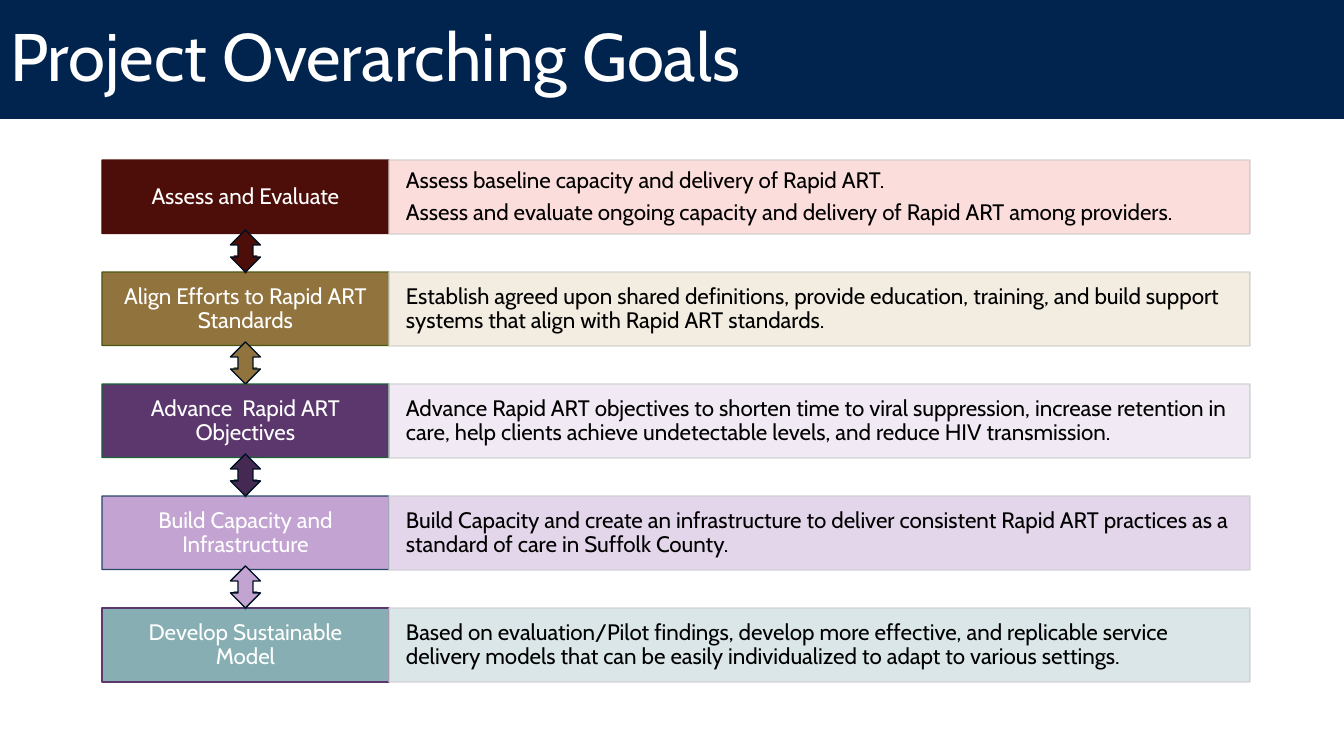
from lxml.etree import SubElement
from pptx import Presentation
from pptx.dml.color import RGBColor as Rgb
from pptx.enum.shapes import MSO_SHAPE as Kind
from pptx.enum.text import MSO_ANCHOR as Anchor, PP_ALIGN as Align
from pptx.oxml.ns import qn
from pptx.util import Pt

# Content: label, label fill, label line, details, detail fill, opacity, detail line
TITLE = "Project Overarching Goals"
GOALS = [
    ("Assess and Evaluate", "maroon", "maroon",
     ["Assess baseline capacity and delivery of Rapid ART.",
      "Assess and evaluate ongoing capacity and delivery of Rapid ART among providers."],
     "pink", 90, "pinkline"),
    ("Align Efforts to Rapid ART Standards", "gold", "olive",
     ["Establish agreed upon shared definitions, provide education, training, "
      "and build support systems that align with Rapid ART standards."],
     "cream", 90, "creamline"),
    ("Advance  Rapid ART Objectives", "purple", "green",
     ["Advance Rapid ART objectives to shorten time to viral suppression, increase "
      "retention in care, help clients achieve undetectable levels, and reduce HIV transmission."],
     "lilac", 44, "greenline"),
    ("Build Capacity and Infrastructure", "mauve", "blue",
     ["Build Capacity and create an infrastructure to deliver consistent Rapid ART "
      "practices as a standard of care in Suffolk County."],
     "lilac", 90, "blueline"),
    ("Develop Sustainable Model", "teal", "purple",
     ["Based on evaluation/Pilot findings, develop more effective, and replicable service "
      "delivery models that can be easily individualized to adapt to various settings."],
     "mist", 90, "mistline"),
]
ARROWS = ["maroon", "gold", "plum", "mauve"]
COLORS = {
    "navy": "00244D", "white": "FFFFFF", "black": "000000", "ink": "001022",
    "maroon": "4D0D08", "gold": "91733E", "purple": "5C376E", "plum": "452952",
    "mauve": "C2A3D1", "teal": "87AEB2", "olive": "495910", "green": "1B6235",
    "blue": "284769", "pink": "FBDBD9", "cream": "F1EADE", "lilac": "E0D1E8",
    "mist": "D7E4E5", "pinkline": "D0CCCC", "creamline": "D0D1CC",
    "greenline": "CDD2CE", "blueline": "CDD1D3", "mistline": "D2CED5",
}
FONT = "Cabin"

# Layout in px
SCALE = 914400 / 100.8
WIDE, HIGH, HEAD = 1344, 756, 119
LEFT, TOP, PITCH, ROW = 102, 160, 112, 74
LABEL, DETAIL = 287, 861
ARROW, RISE = 30, 42


def px(n):
    return round(n * SCALE)


def fade(fill, percent):
    for tint in fill.iter(qn("a:srgbClr")):
        SubElement(tint, qn("a:alpha"), val=str(percent * 1000))


def draw(kind, box, fill, line=None):
    shape = slide.shapes.add_shape(kind, *map(px, box))
    shape.shadow.inherit = False
    shape.fill.solid()
    shape.fill.fore_color.rgb = Rgb.from_string(COLORS[fill])
    if line:
        shape.line.color.rgb = Rgb.from_string(COLORS[line])
        shape.line.width = Pt(1)
    else:
        shape.line.fill.background()
    return shape


def write(shape, lines, size, color, align, inset, after=0):
    frame = shape.text_frame
    frame.word_wrap = True
    frame.vertical_anchor = Anchor.MIDDLE
    frame.margin_left = frame.margin_right = px(inset[0])
    frame.margin_top = frame.margin_bottom = px(inset[1])
    frame.text = "\n".join(lines)
    for para in frame.paragraphs:
        para.alignment = align
        para.line_spacing = 0.9
        para.space_after = Pt(after)
        for run in para.runs:
            run.font.name = FONT
            run.font.size = Pt(size)
            run.font.color.rgb = Rgb.from_string(COLORS[color])


deck = Presentation()
deck.slide_width, deck.slide_height = px(WIDE), px(HIGH)
slide = deck.slides.add_slide(deck.slide_layouts[6])

# Title band
band = draw(Kind.RECTANGLE, (0, 0, WIDE, HEAD), "navy")
write(band, [TITLE], 48, "white", Align.LEFT, (10, 5))

# Goal rows, from the bottom up so each callout overlaps the row below
for i, (label, fill, line, lines, tint, alpha, edge) in reversed(list(enumerate(GOALS))):
    top = TOP + i * PITCH
    area = (LEFT, top, LABEL, ROW)
    if i < len(GOALS) - 1:
        call = draw(Kind.UP_ARROW_CALLOUT, (LEFT, top, LABEL, PITCH + 1), fill, line)
        call.rotation = 180
        for k, value in enumerate((0.05, 0.1, 0.15, 0.65)):
            call.adjustments[k] = value
    else:
        draw(Kind.RECTANGLE, area, fill, line)
    name = slide.shapes.add_textbox(*map(px, area))
    write(name, [label], 16, "white", Align.CENTER, (20, 12), 5.6)

    panel = draw(Kind.RECTANGLE, (LEFT + LABEL, top, DETAIL, ROW), tint, edge)
    write(panel, lines, 16, "black", Align.LEFT, (17, 22), 5.6)
    props = panel.fill.fore_color, panel.line.color
    solid = panel.element.spPr.find(qn("a:solidFill"))
    fade(solid, alpha)
    fade(panel.element.spPr.find(qn("a:ln")), 90)

# Arrows between rows
for i, fill in enumerate(ARROWS):
    foot = TOP + (i + 1) * PITCH
    draw(Kind.UP_DOWN_ARROW,
         (LEFT + (LABEL - ARROW) / 2, foot - RISE, ARROW, RISE), fill, "ink")

deck.save("out.pptx")
